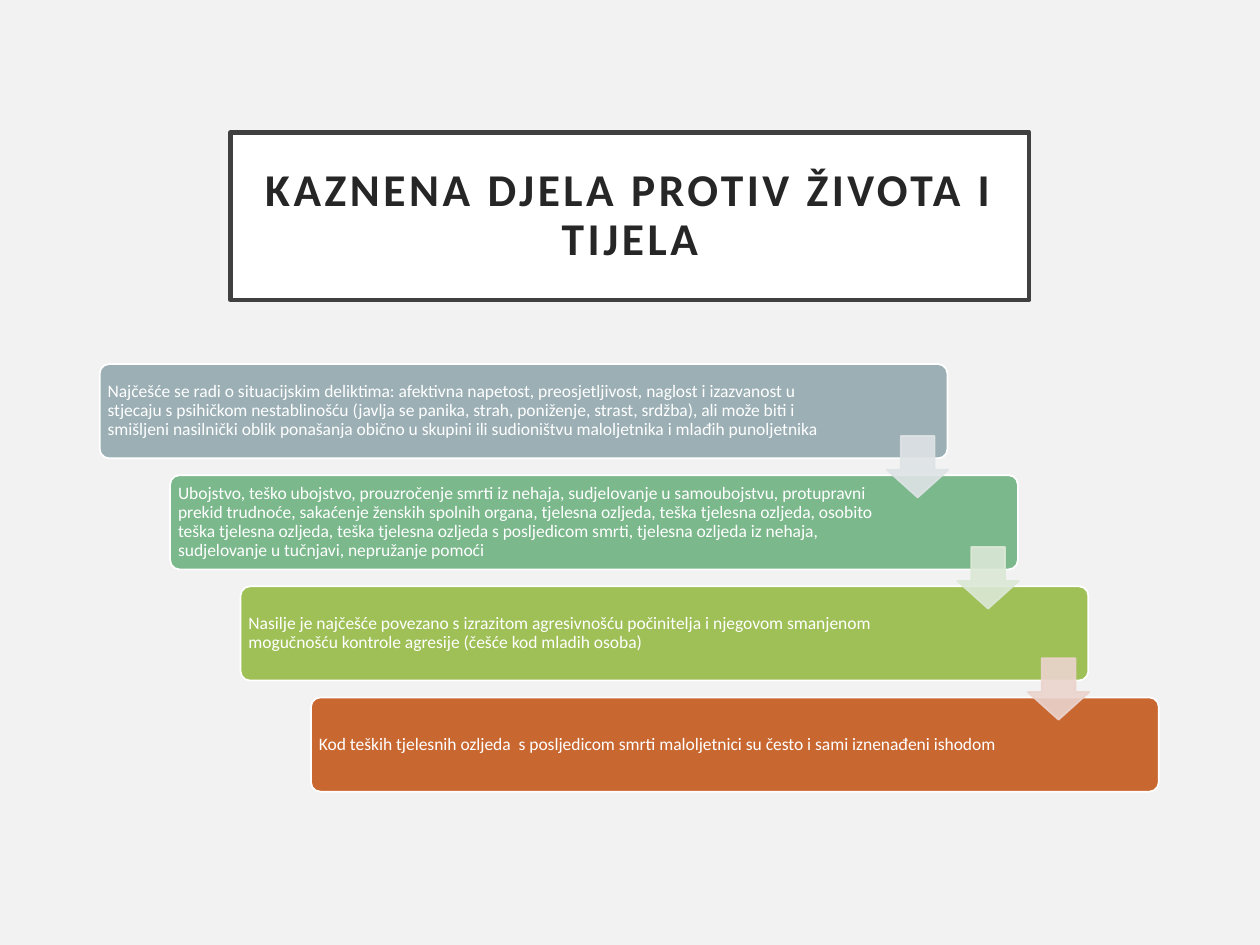
import pptx
import pptx.util
import pptx.dml.color
import pptx.enum.shapes
import pptx.enum.text
import pptx.oxml.ns
import lxml.etree

Cm = pptx.util.Cm
Pt = pptx.util.Pt
RGB = pptx.dml.color.RGBColor
SHAPE = pptx.enum.shapes.MSO_SHAPE
ALIGN = pptx.enum.text.PP_ALIGN

PAPER = RGB(0xF2, 0xF2, 0xF2)
WHITE = RGB(0xFF, 0xFF, 0xFF)
FRAME = RGB(0x40, 0x40, 0x40)
INK = RGB(0x26, 0x26, 0x26)
SLATE = RGB(0x9B, 0xAF, 0xB5)
GREEN = RGB(0x7B, 0xB8, 0x8C)
LIME = RGB(0x9F, 0xC0, 0x57)
RUST = RGB(0xC9, 0x67, 0x31)
MIST = RGB(0xDE, 0xE3, 0xE5)
MINT = RGB(0xDB, 0xE8, 0xD6)
BLUSH = RGB(0xEB, 0xD3, 0xCD)

STEPS = [
    (SLATE, 14.88, "Najčešće se radi o situacijskim deliktima: afektivna napetost, "
     "preosjetljivost, naglost i izazvanost u stjecaju s psihičkom nestablinošću "
     "(javlja se panika, strah, poniženje, strast, srdžba), ali može biti i smišljeni "
     "nasilnički oblik ponašanja obično u skupini ili sudioništvu maloljetnika i "
     "mlađih punoljetnika"),
    (GREEN, 14.33, "Ubojstvo, teško ubojstvo, prouzročenje smrti iz nehaja, sudjelovanje "
     "u samoubojstvu, protupravni prekid trudnoće, sakaćenje ženskih spolnih organa, "
     "tjelesna ozljeda, teška tjelesna ozljeda, osobito teška tjelesna ozljeda, teška "
     "tjelesna ozljeda s posljedicom smrti, tjelesna ozljeda iz nehaja, sudjelovanje u "
     "tučnjavi, nepružanje pomoći"),
    (LIME, 14.33, "Nasilje je najčešće povezano s izrazitom agresivnošću počinitelja i "
     "njegovom smanjenom mogučnošću kontrole agresije (češće kod mladih osoba)"),
    (RUST, 14.33, "Kod teških tjelesnih ozljeda  s posljedicom smrti maloljetnici su "
     "često i sami iznenađeni ishodom"),
]
ARROWS = [MIST, MINT, BLUSH]
LEFT, TOP = 2.01, 7.34
RIGHT, DOWN = 1.42, 2.24


class Deck:
    font = "Calibri"

    def __init__(self):
        self.show = pptx.Presentation()
        self.show.slide_width = Cm(25.4)
        self.show.slide_height = Cm(19.05)
        self.slide = self.show.slides.add_slide(self.show.slide_layouts[6])
        fill = self.slide.background.fill
        fill.solid()
        fill.fore_color.rgb = PAPER
        self.group = self.slide.shapes.add_group_shape()

    def shape(self, home, kind, area, color, edge, width):
        item = home.shapes.add_shape(kind, *map(Cm, area))
        item.shadow.inherit = False
        item.fill.solid()
        item.fill.fore_color.rgb = color
        item.line.color.rgb = edge
        item.line.width = Pt(width)
        return item

    def text(self, item, words, size, color, inset, align):
        frame = item.text_frame
        frame.word_wrap = True
        frame.vertical_anchor = pptx.enum.text.MSO_ANCHOR.MIDDLE
        frame.margin_left = frame.margin_right = Cm(inset)
        frame.margin_top = frame.margin_bottom = Cm(inset)
        line = frame.paragraphs[0]
        line.text = words
        line.alignment = align
        line.line_spacing = 0.9
        line.font.name = self.font
        line.font.size = Pt(size)
        line.font.color.rgb = color
        return line

    def title(self, words, area):
        item = self.shape(self.slide, SHAPE.RECTANGLE, area, WHITE, FRAME, 2.5)
        line = self.text(item, words, 26, INK, 0.51, ALIGN.CENTER)
        line.font.bold = True
        line.runs[0]._r.get_or_add_rPr().set("spc", "200")

    def panel(self, area, color):
        item = self.shape(self.group, SHAPE.ROUNDED_RECTANGLE, area, color, WHITE, 1)
        item.adjustments[0] = 0.1

    def label(self, words, area):
        item = self.group.shapes.add_textbox(*map(Cm, area))
        self.text(item, words, 10, WHITE, 0.1, ALIGN.LEFT)

    def arrow(self, area, color):
        item = self.shape(self.group, SHAPE.DOWN_ARROW, area, color, color, 1)
        item.adjustments[0] = 0.55
        item.adjustments[1] = 0.45
        qn = pptx.oxml.ns.qn
        for tint in item._element.spPr.iter(qn("a:srgbClr")):
            lxml.etree.SubElement(tint, qn("a:alpha")).set("val", "90000")


def main():
    deck = Deck()
    deck.title("KAZNENA DJELA PROTIV ŽIVOTA I TIJELA", (4.65, 2.67, 16.1, 3.38))
    for i, (color, width, words) in enumerate(STEPS):
        x, y = LEFT + i * RIGHT, TOP + i * DOWN
        deck.panel((x, y, 17.09, 1.9), color)
        deck.label(words, (x + 0.06, y + 0.06, width, 1.78))
    for i, color in enumerate(ARROWS):
        deck.arrow((17.88 + i * RIGHT, 8.79 + i * DOWN, 1.24, 1.24), color)
    deck.show.save("out.pptx")


if __name__ == "__main__":
    main()
